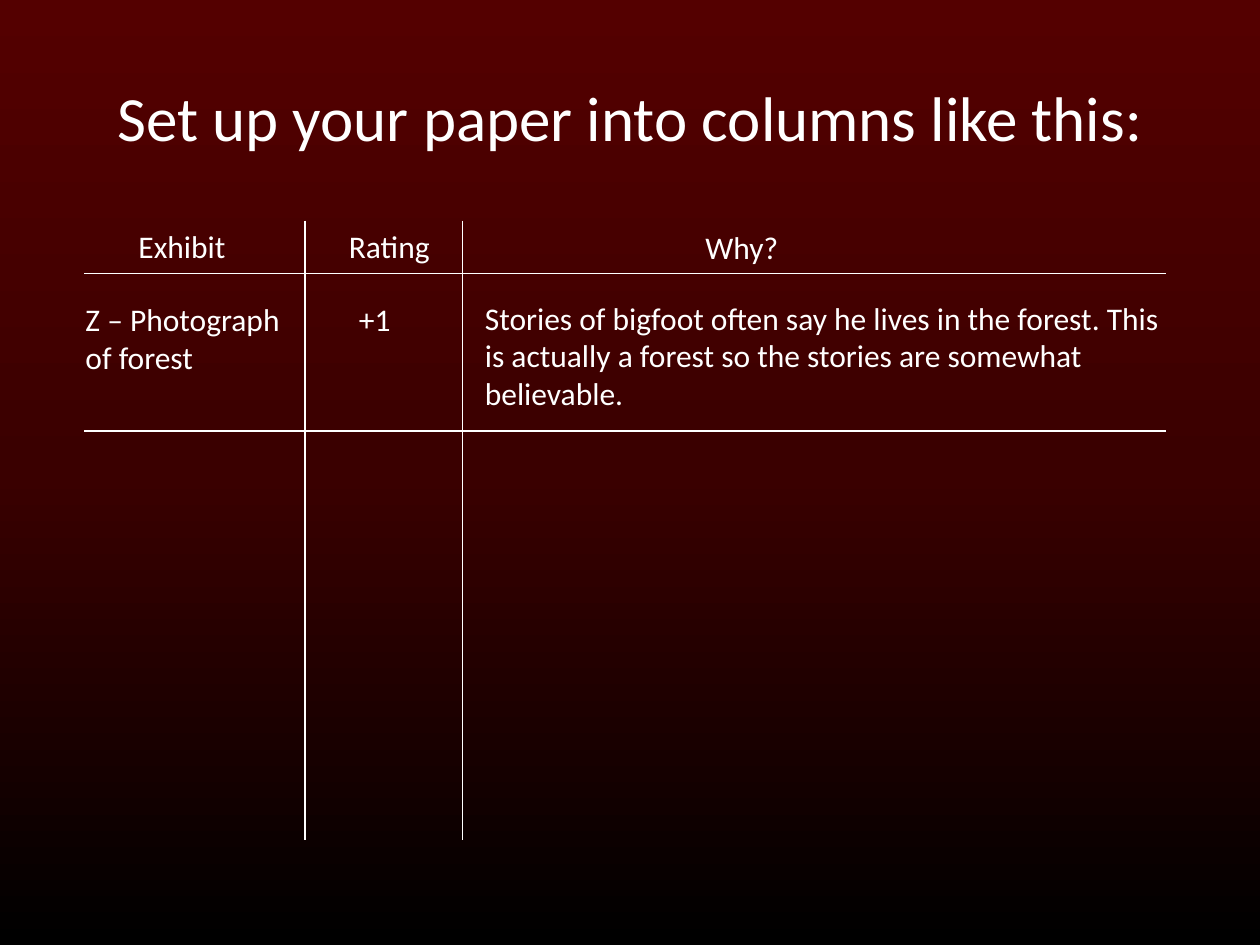
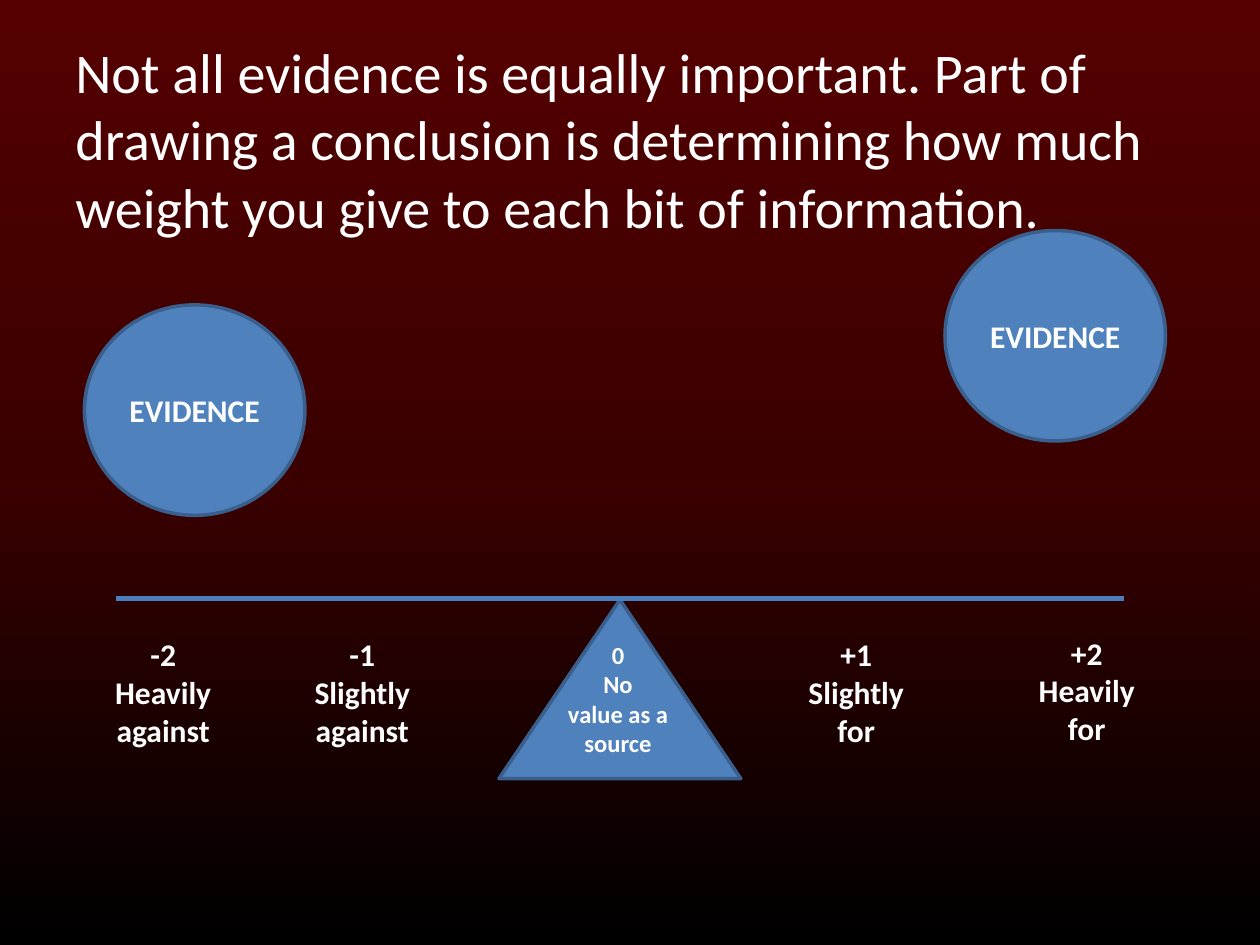
import pptx
import pptx.util
import pptx.dml.color
import pptx.enum.shapes
import pptx.enum.text
import pptx.oxml
import pptx.oxml.ns
import lxml.etree

PX = 9144  # 100 px to the inch
FONT = "Calibri"
WHITE, BLUE, EDGE, BEAM = "FFFFFF", "4F81BD", "3A5F8C", "4B7EBC"
FADE = [(0, "540000"), (50, "3A0000"), (100, "000000")]
SHAPE = pptx.enum.shapes.MSO_SHAPE
ALIGN = pptx.enum.text.PP_ALIGN
ANCHOR = pptx.enum.text.MSO_ANCHOR
rgb = pptx.dml.color.RGBColor.from_string
qn = pptx.oxml.ns.qn


def write(shape, text, size, bold=False, align=ALIGN.LEFT, anchor=ANCHOR.TOP):
    frame = shape.text_frame
    frame.text = text
    frame.word_wrap = True
    frame.vertical_anchor = anchor
    for para in frame.paragraphs:
        para.alignment = align
        for run in para.runs:
            run.font.name = FONT
            run.font.size = pptx.util.Pt(size)
            run.font.bold = bold
            run.font.color.rgb = rgb(WHITE)


def rule(slide, x1, y1, x2, y2, color, width):
    line = slide.shapes.add_connector(
        pptx.enum.shapes.MSO_CONNECTOR.STRAIGHT, x1 * PX, y1 * PX, x2 * PX, y2 * PX)
    line.line.color.rgb = rgb(color)
    line.line.width = pptx.util.Pt(width)
    lxml.etree.SubElement(line.element.spPr, qn("a:effectLst"))


deck = pptx.Presentation()
deck.slide_width, deck.slide_height = 1000 * PX, 750 * PX
blank = deck.slide_layouts[6]

# Shared background: dark red fading down to black
master = deck.slide_master
fill = master.background.fill
fill.gradient()
fill.gradient_angle = 270
stops = master.element.find(".//" + qn("a:gsLst"))
for stop in list(stops):
    stops.remove(stop)
for pos, color in FADE:
    stop = lxml.etree.SubElement(stops, qn("a:gs"), pos=str(pos * 1000))
    lxml.etree.SubElement(stop, qn("a:srgbClr"), val=color)

# Slide 1: title
slide = deck.slides.add_slide(blank)
title = slide.shapes.add_textbox(50 * PX, 30 * PX, 900 * PX, 125 * PX)
write(title, "Set up your paper into columns like this:", 36,
      align=ALIGN.CENTER, anchor=ANCHOR.MIDDLE)

# Ruled columns
for y in (217, 342):
    rule(slide, 67, y, 925, y, WHITE, 0.75)
for x in (242, 367):
    rule(slide, x, 175, x, 667, WHITE, 0.75)

# Heads and sample row
cells = [
    (100, 175, 175, 40, "Exhibit"),
    (267, 175, 175, 40, "Rating"),
    (550, 176, 175, 40, "Why?"),
    (58, 233, 175, 71, "Z – Photograph\nof forest"),
    (275, 233, 175, 40, "+1"),
    (375, 232, 567, 101, "Stories of bigfoot often say he lives in the forest. "
     "This is actually a forest so the stories are somewhat believable."),
]
for x, y, w, h, text in cells:
    write(slide.shapes.add_textbox(x * PX, y * PX, w * PX, h * PX), text, 18)

# Slide 2: statement
slide = deck.slides.add_slide(blank)
body = slide.shapes.add_textbox(50 * PX, 25 * PX, 900 * PX, 495 * PX)
write(body, "Not all evidence is equally important. Part of drawing a conclusion is "
      "determining how much weight you give to each bit of information.", 32)

# Pivot and weights
solids = [
    (SHAPE.ISOSCELES_TRIANGLE, 396, 476, 192, 142, ""),
    (SHAPE.OVAL, 67, 242, 175, 167, "EVIDENCE"),
    (SHAPE.OVAL, 750, 183, 175, 167, "EVIDENCE"),
]
for kind, x, y, w, h, text in solids:
    solid = slide.shapes.add_shape(kind, x * PX, y * PX, w * PX, h * PX)
    solid.shadow.inherit = False
    solid.fill.solid()
    solid.fill.fore_color.rgb = rgb(BLUE)
    solid.line.color.rgb = rgb(EDGE)
    solid.line.width = pptx.util.Pt(2)
    if text:
        write(solid, text, 18, True, ALIGN.CENTER, ANCHOR.MIDDLE)

# Beam and its scale
rule(slide, 92, 475, 892, 475, BEAM, 3)
marks = [
    (67, 499, 18, "-2\nHeavily against"),
    (225, 499, 18, "-1\nSlightly against"),
    (428, 503, 14, "0\nNo\nvalue as a source"),
    (617, 499, 18, "+1\nSlightly for"),
    (800, 498, 18, "+2\nHeavily for"),
]
for x, y, size, text in marks:
    mark = slide.shapes.add_textbox(x * PX, y * PX, 125 * PX, 101 * PX)
    write(mark, text, size, True, ALIGN.CENTER)

deck.save("out.pptx")
